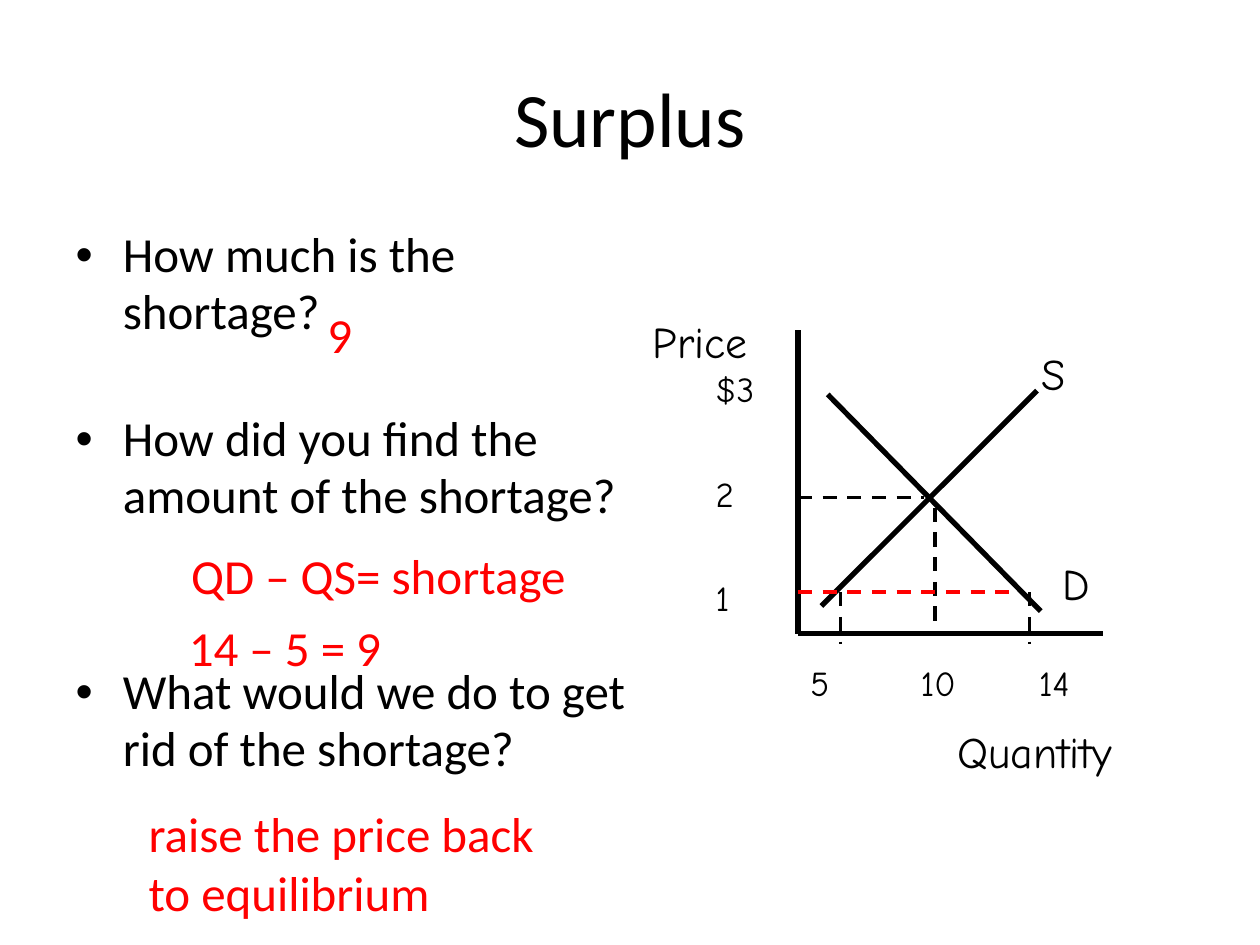
from lxml import etree
from pptx import Presentation
from pptx.dml.color import RGBColor
from pptx.enum.dml import MSO_LINE
from pptx.enum.shapes import MSO_CONNECTOR
from pptx.enum.text import MSO_ANCHOR, MSO_AUTO_SIZE, PP_ALIGN
from pptx.oxml.ns import qn
from pptx.util import Pt

BLACK = RGBColor(0, 0, 0)
RED = RGBColor(255, 0, 0)
BODY_FONT = "Calibri"
GRAPH_FONT = "Comic Neue"


def place(sp, left, top, width, height):
    sp.left, sp.top = Pt(left), Pt(top)
    sp.width, sp.height = Pt(width), Pt(height)


def style(p, name, size, color):
    p.font.name = name
    p.font.size = Pt(size)
    p.font.color.rgb = color


def add_text(s, text, left, top, width, height, name, size, color):
    sp = s.shapes.add_textbox(Pt(left), Pt(top), Pt(width), Pt(height))
    tf = sp.text_frame
    tf.word_wrap = True
    p = tf.paragraphs[0]
    p.text = text
    style(p, name, size, color)


def add_line(s, x1, y1, x2, y2, width=3, color=BLACK, dashed=False):
    line = s.shapes.add_connector(MSO_CONNECTOR.STRAIGHT, Pt(x1), Pt(y1), Pt(x2), Pt(y2))
    line.line.width = Pt(width)
    line.line.color.rgb = color
    if dashed:
        line.line.dash_style = MSO_LINE.DASH
    etree.SubElement(line._element.spPr, qn("a:effectLst"))


def build_title(s, left, top, width, height):
    sp = s.shapes.title
    place(sp, left, top, width, height)
    tf = sp.text_frame
    tf.vertical_anchor = MSO_ANCHOR.MIDDLE
    p = tf.paragraphs[0]
    p.text = "Surplus"
    p.alignment = PP_ALIGN.CENTER
    style(p, BODY_FONT, 44, BLACK)


def build_questions(s, left, top, width, height):
    questions = [
        ("How much is the shortage?", 0),
        ("How did you find the amount of the shortage?", 40),
        ("What would we do to get rid of the shortage?", 79.5),
    ]
    sp = s.placeholders[1]
    place(sp, left, top, width, height)
    tf = sp.text_frame
    tf.auto_size = MSO_AUTO_SIZE.NONE
    for i, (text, gap) in enumerate(questions):
        p = tf.paragraphs[0] if i == 0 else tf.add_paragraph()
        p.text = text
        p.space_before = Pt(gap)
        p.line_spacing = 0.97
        style(p, BODY_FONT, 28, BLACK)


def build_answers(s, left, top):
    answers = [
        ("9", 144, 44.6, 69, 41),
        ("QD – QS= shortage", 66.2, 182.2, 246, 41),
        ("14 – 5 = 9", 64.8, 223.2, 228, 41),
        ("raise the price back to equilibrium", 41.8, 329.8, 264, 75),
    ]
    for text, x, y, width, height in answers:
        add_text(s, text, left + x, top + y, width, height, BODY_FONT, 28, RED)


def build_graph(s, left, top):
    axis_x, axis_y = left + 90, top + 186.2
    add_line(s, axis_x, top + 12.6, axis_x, axis_y)
    add_line(s, left + 264, axis_y, axis_x, axis_y)

    add_line(s, left + 226.6, top + 47.2, left + 103.4, top + 170.3)
    add_line(s, left + 107, top + 49.4, left + 228.7, top + 173.2)

    equilibrium_y, low_price_y = top + 108.4, top + 162.4
    add_line(s, axis_x, equilibrium_y, left + 162, equilibrium_y, 2, dashed=True)
    add_line(s, left + 168.2, top + 114.2, left + 168.2, axis_y, 2, dashed=True)
    add_line(s, axis_x, low_price_y, left + 216, low_price_y, 2, RED, True)
    for x in (114.2, 222.2):
        add_line(s, left + x, low_price_y, left + x, top + 192, 2, dashed=True)

    names = [("S", 222.2, 18.4, 54), ("D", 233.8, 138.6, 54),
             ("Price", 0, 0.4, 78), ("Quantity", 174, 234.4, 138)]
    for text, x, y, width in names:
        add_text(s, text, left + x, top + y, width, 37.4, GRAPH_FONT, 25, BLACK)

    for i, text in enumerate(("$3", "2", "1")):
        add_text(s, text, left + 35.8, top + 30.6 + 59.75 * i, 48, 31, GRAPH_FONT, 20, BLACK)
    for text, x in (("5", 90), ("10", 153), ("14", 220.5)):
        add_text(s, text, left + x, top + 198.4, 48, 31, GRAPH_FONT, 20, BLACK)


def main():
    prs = Presentation()
    prs.slide_width, prs.slide_height = Pt(720), Pt(540)
    s = prs.slides.add_slide(prs.slide_layouts[1])
    build_title(s, 36, 21.6, 648, 90)
    build_questions(s, 36, 126, 348, 356.4)
    build_answers(s, 36, 126)
    build_graph(s, 366, 176)
    prs.save("out.pptx")


if __name__ == "__main__":
    main()
